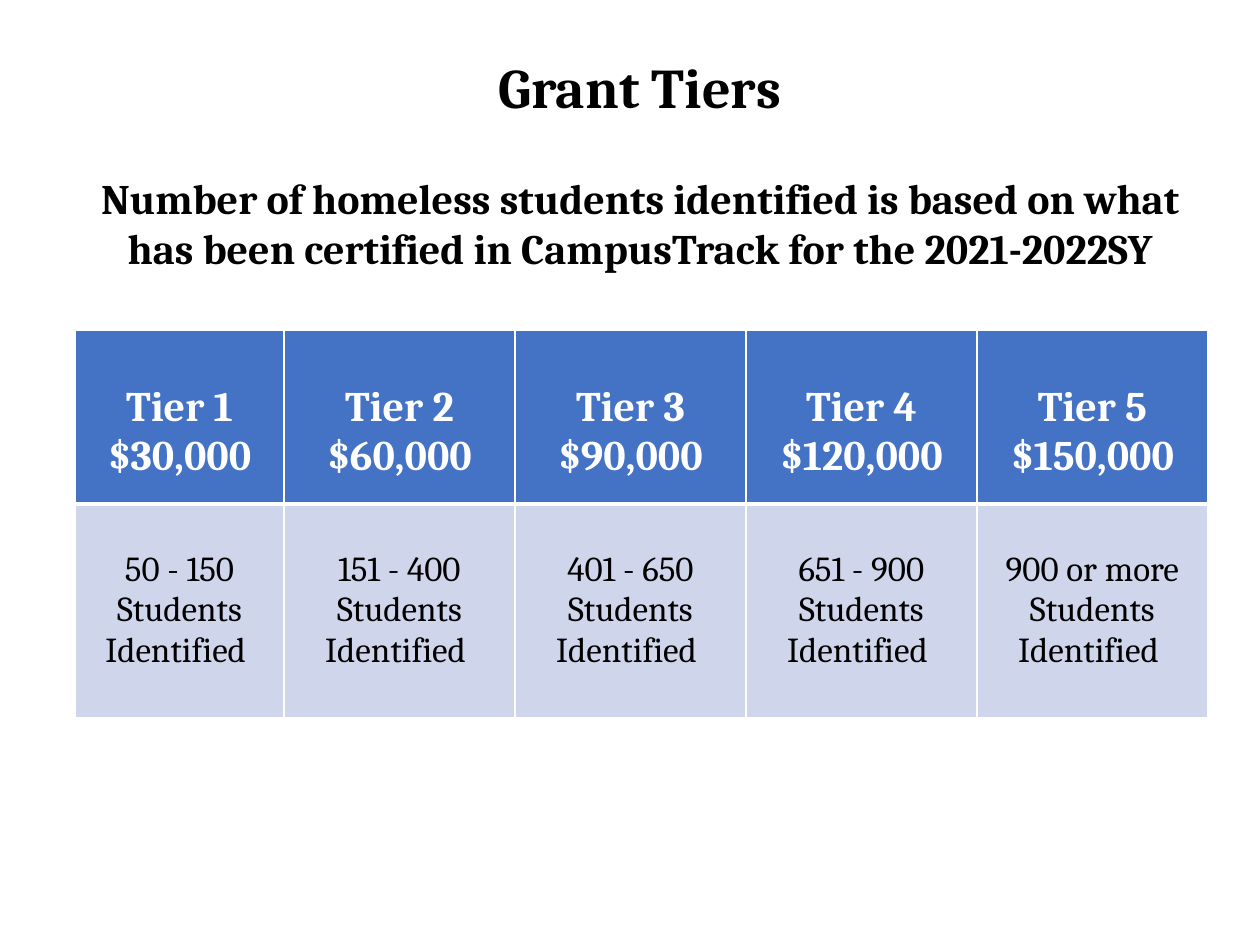
from lxml import etree
from pptx import Presentation
from pptx import util as u
from pptx.dml import color
from pptx.enum import text
from pptx.oxml import ns

FONT = "Cambria"
TIERS = [
    ("Tier 1", "$30,000", "50 - 150"),
    ("Tier 2", "$60,000", "151 - 400"),
    ("Tier 3", "$90,000", "401 - 650"),
    ("Tier 4", "$120,000", "651 - 900"),
    ("Tier 5", "$150,000", "900 or more"),
]


def px(n):
    """Turn whole pixels into EMU."""
    return u.Emu(n * 914400 // 126)


def rgb(value):
    """Turn a hex string into a colour."""
    return color.RGBColor.from_string(value)


def write(p, words, size=24, bold=True, fill="000000", before=0):
    """Write one centred line of formatted text into a paragraph."""
    p.alignment = text.PP_ALIGN.CENTER
    p.space_before = u.Pt(before)
    r = p.add_run()
    r.text = words
    r.font.name, r.font.size, r.font.bold = FONT, u.Pt(size), bold
    r.font.color.rgb = rgb(fill)


def add_border(cell, side, width):
    """Draw a white line on one side of a cell."""
    ln = etree.SubElement(cell._tc.get_or_add_tcPr(), ns.qn(f"a:ln{side}"), w=str(u.Pt(width)))
    fill = etree.SubElement(ln, ns.qn("a:solidFill"))
    etree.SubElement(fill, ns.qn("a:srgbClr"), val="FFFFFF")


def fill_cell(cell, lines, back, top, borders, **fmt):
    """Give a cell its borders, fill and lines of text."""
    for side, width in zip("LRTB", borders):
        add_border(cell, side, width)
    cell.fill.solid()
    cell.fill.fore_color.rgb = rgb(back)
    cell.margin_top = px(top)
    tf = cell.text_frame
    for i, line in enumerate(lines):
        write(tf.add_paragraph() if i else tf.paragraphs[0], line, **fmt)


def add_title(s, x, y, w, h):
    """Place the heading and its explanation in the title placeholder."""
    sp = s.shapes.title
    sp.left, sp.top, sp.width, sp.height = map(px, (x, y, w, h))
    tf = sp.text_frame
    tf.auto_size = text.MSO_AUTO_SIZE.NONE
    tf.vertical_anchor = text.MSO_ANCHOR.MIDDLE
    write(tf.paragraphs[0], "Grant Tiers", size=32)
    write(
        tf.add_paragraph(),
        "Number of homeless students identified is based on what "
        "has been certified in CampusTrack for the 2021-2022SY",
        before=30,
    )


def add_tiers(s, x, y, w, h):
    """Place the table of grant tiers, with a narrower first column."""
    table = s.shapes.add_table(2, len(TIERS), px(x), px(y), px(w), px(h)).table
    head, col = 174, 231
    table.rows[0].height, table.rows[1].height = px(head), px(h - head)
    for i, (name, amount, students) in enumerate(TIERS):
        table.columns[i].width = px(col if i else w - col * (len(TIERS) - 1))
        fill_cell(table.cell(0, i), [name, amount], "4472C4", 54, (1, 1, 1, 3), fill="FFFFFF")
        fill_cell(table.cell(1, i), [students, "Students Identified "], "CFD5EA", 46,
                  (1, 1, 3, 1), size=20, bold=False)


def main():
    """Build and save the slide."""
    prs = Presentation()
    prs.slide_width, prs.slide_height = px(1260), px(945)
    s = prs.slides.add_slide(prs.slide_layouts[5])
    add_title(s, 73, 42, 1134, 242)
    add_tiers(s, 75, 330, 1133, 388)
    prs.save("out.pptx")


if __name__ == "__main__":
    main()
